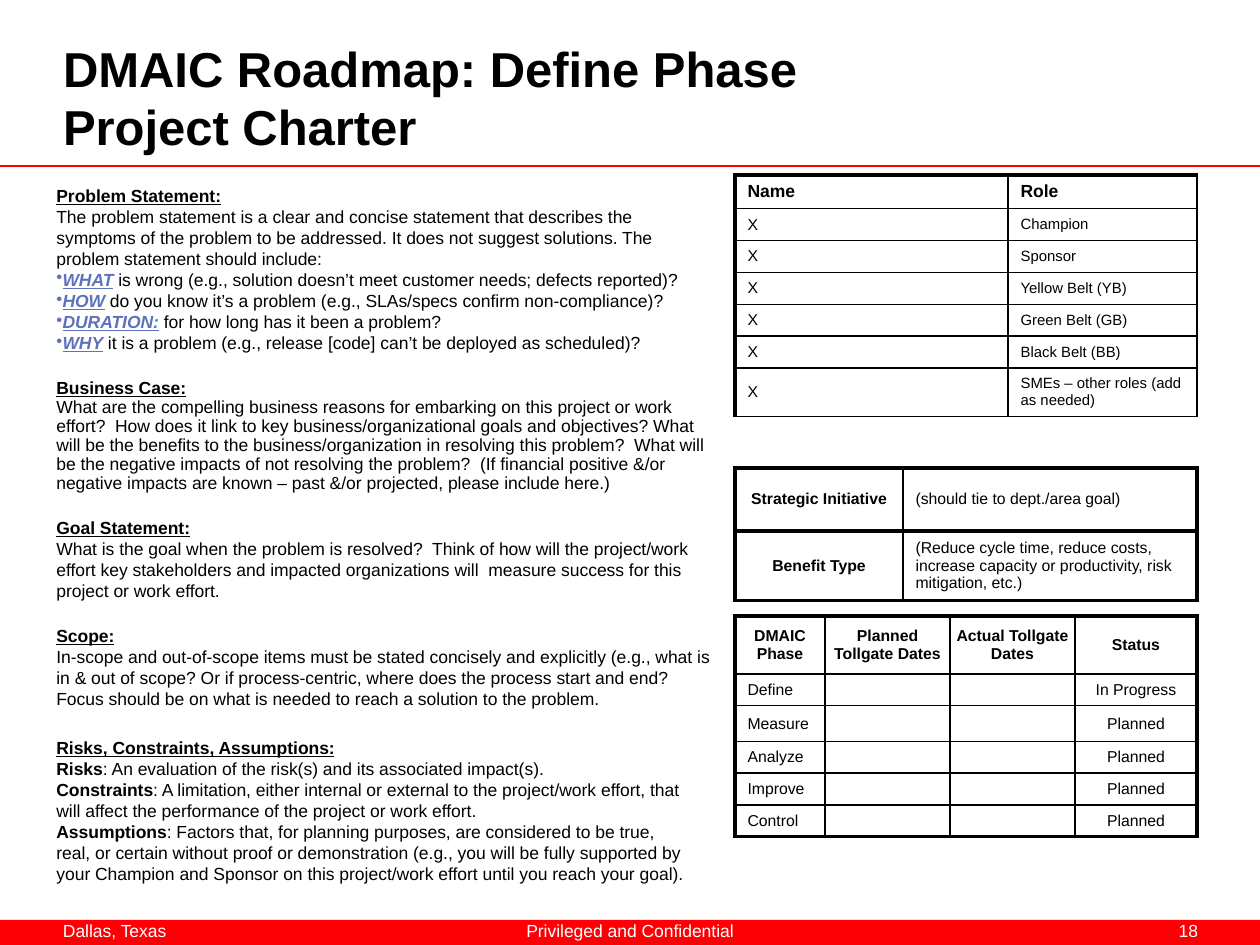
from lxml.etree import SubElement
from pptx import Presentation
from pptx.dml.color import RGBColor
from pptx.enum.shapes import MSO_CONNECTOR, MSO_SHAPE
from pptx.enum.text import MSO_ANCHOR, MSO_AUTO_SIZE, PP_ALIGN
from pptx.oxml.ns import qn
from pptx.util import Emu, Pt

BLACK = RGBColor(0, 0, 0)
WHITE = RGBColor(255, 255, 255)
RED = RGBColor(0xFC, 0x00, 0x06)
BLUE = RGBColor(0x5D, 0x72, 0xBD)
LEFT, MID, RIGHT = PP_ALIGN.LEFT, PP_ALIGN.CENTER, PP_ALIGN.RIGHT


def px(n):
    return Emu(round(n * 914400 / 126))


class Deck:
    font = "Arial"
    thin, thick = 1, 2.25

    def __init__(self, wide, high):
        self.prs = Presentation()
        self.prs.slide_width, self.prs.slide_height = px(wide), px(high)
        self.slide = self.prs.slides.add_slide(self.prs.slide_layouts[5])
        self.shapes = self.slide.shapes

    def run(self, para, text, size, color=BLACK, bold=False, italic=False, under=False):
        run = para.add_run()
        run.text = text
        font = run.font
        font.name, font.size, font.color.rgb = self.font, Pt(size), color
        font.bold, font.italic, font.underline = bold, italic, under

    def flush(self, frame):
        frame.margin_left = frame.margin_top = 0
        frame.margin_right = frame.margin_bottom = 0
        frame.word_wrap = True

    def title(self, lines, box):
        shape = self.shapes.title
        shape.left, shape.top, shape.width, shape.height = map(px, box)
        frame = shape.text_frame
        self.flush(frame)
        frame.auto_size = MSO_AUTO_SIZE.NONE
        frame.vertical_anchor = MSO_ANCHOR.TOP
        para = frame.paragraphs[0]
        para.alignment = LEFT
        for i, line in enumerate(lines):
            if i:
                para.add_line_break()
            self.run(para, line, 28, bold=True)

    def bar(self, box):
        shape = self.shapes.add_shape(MSO_SHAPE.RECTANGLE, *map(px, box))
        shape.shadow.inherit = False
        shape.fill.solid()
        shape.fill.fore_color.rgb = RED
        shape.line.fill.background()

    def rule(self, x1, y1, x2, y2):
        line = self.shapes.add_connector(MSO_CONNECTOR.STRAIGHT, *map(px, (x1, y1, x2, y2)))
        line.line.color.rgb, line.line.width = RED, Pt(self.thin)
        SubElement(line._element.spPr, qn("a:effectLst"))

    def label(self, text, box, align):
        frame = self.shapes.add_textbox(*map(px, box)).text_frame
        self.flush(frame)
        para = frame.paragraphs[0]
        para.alignment = align
        self.run(para, text, 10, WHITE)

    def block(self, head, paras, box, space=None):
        """Underlined heading, then (lead, text, bullet) paragraphs."""
        frame = self.shapes.add_textbox(*map(px, box)).text_frame
        frame.word_wrap = True
        frame.auto_size = MSO_AUTO_SIZE.SHAPE_TO_FIT_TEXT
        self.run(frame.paragraphs[0], head, 10, bold=True, under=True)
        for lead, text, bullet in paras:
            para = frame.add_paragraph()
            if space:
                para.line_spacing = space
            if bullet:
                SubElement(para._p.get_or_add_pPr(), qn("a:buChar"), char="•")
                self.run(para, lead, 10, BLUE, True, True, True)
            elif lead:
                self.run(para, lead, 10, bold=True)
            self.run(para, text, 10)

    def edge(self, cell, side, width):
        line = SubElement(cell._tc.get_or_add_tcPr(), qn("a:ln" + side), w=str(Pt(width)))
        fill = SubElement(line, qn("a:solidFill"))
        SubElement(fill, qn("a:srgbClr"), val=str(BLACK))

    def table(self, x, y, cols, rows, data, size, bold, align, heavy="LRTB", inner=thin, pad=None):
        """size, bold and align are rules of (row, column)."""
        shape = self.shapes.add_table(len(rows), len(cols), px(x), px(y), px(sum(cols)), px(sum(rows)))
        table = shape.table
        table.first_row = table.horz_banding = False
        for col, wide in zip(table.columns, cols):
            col.width = px(wide)
        for row, high in zip(table.rows, rows):
            row.height = px(high)
        for r, texts in enumerate(data):
            for c, text in enumerate(texts):
                cell = table.cell(r, c)
                cell.vertical_anchor = MSO_ANCHOR.MIDDLE
                if pad and r == 0:
                    cell.margin_left = cell.margin_right = px(pad)
                # Outer sides may be heavy, row rules follow inner
                outer = {"L": c == 0, "R": c == len(cols) - 1, "T": r == 0, "B": r == len(rows) - 1}
                for side, out in outer.items():
                    if out:
                        width = self.thick if side in heavy else self.thin
                    else:
                        width = inner if side in "TB" else self.thin
                    self.edge(cell, side, width)
                cell.fill.background()
                para = cell.text_frame.paragraphs[0]
                para.alignment = align(r, c)
                if text:
                    self.run(para, text, size(r, c), bold=bold(r, c))
                else:
                    para._p.get_or_add_endParaRPr().set("sz", str(size(r, c) * 100))


deck = Deck(1260, 945)

# Title and footer
deck.bar((0, 920, 1260, 25))
deck.rule(0, 166, 1260, 166)
deck.title(["DMAIC Roadmap: Define Phase", "Project Charter"], (63, 38, 1134, 130))
deck.label("Dallas, Texas", (63, 920, 150, 25), LEFT)
deck.label("Privileged and Confidential", (480, 920, 300, 25), MID)
deck.label("18", (1091, 920, 107, 25), RIGHT)

# Charter text
deck.block("Problem Statement:", [
    ("", "The problem statement is a clear and concise statement that describes the symptoms of the problem "
         "to be addressed. It does not suggest solutions. The problem statement should include:", False),
    ("WHAT", " is wrong (e.g., solution doesn’t meet customer needs; defects reported)?", True),
    ("HOW", " do you know it’s a problem (e.g., SLAs/specs confirm non-compliance)?", True),
    ("DURATION:", " for how long has it been a problem?", True),
    ("WHY", " it is a problem (e.g., release [code] can’t be deployed as scheduled)?", True),
], (44, 179, 680, 183))
deck.block("Business Case:", [
    ("", "What are the compelling business reasons for embarking on this project or work effort?  How does it "
         "link to key business/organizational goals and objectives? What will be the benefits to the "
         "business/organization in resolving this problem?  What will be the negative impacts of not resolving "
         "the problem?  (If financial positive &/or negative impacts are known – past &/or projected, please "
         "include here.)", False),
], (44, 371, 680, 130), space=0.9)
deck.block("Goal Statement:", [
    ("", "What is the goal when the problem is resolved?  Think of how will the project/work effort key "
         "stakeholders and impacted organizations will  measure success for this project or work effort.", False),
], (44, 511, 680, 97))
deck.block("Scope:", [
    ("", "In-scope and out-of-scope items must be stated concisely and explicitly (e.g., what is in & out of "
         "scope? Or if process-centric, where does the process start and end?  Focus should be on what is needed "
         "to reach a solution to the problem.", False),
], (44, 619, 680, 97))
deck.block("Risks, Constraints, Assumptions:", [
    ("Risks", ": An evaluation of the risk(s) and its associated impact(s).", False),
    ("Constraints", ": A limitation, either internal or external to the project/work effort, that will affect "
                    "the performance of the project or work effort.", False),
    ("Assumptions", ": Factors that, for planning purposes, are considered to be true, real, or certain without "
                    "proof or demonstration (e.g., you will be fully supported by your Champion and Sponsor on "
                    "this project/work effort until you reach your goal).", False),
], (44, 731, 659, 161))

# Team roles
roles = ["Champion", "Sponsor", "Yellow Belt (YB)", "Green Belt (GB)", "Black Belt (BB)",
         "SMEs – other roles (add as needed)"]
deck.table(735, 175, [273, 189], [33, 32, 31, 32, 31, 32, 48],
           [("Name", "Role")] + [("X", role) for role in roles],
           size=lambda r, c: 10 if r == 0 else (9, 8.5)[c],
           bold=lambda r, c: r == 0, align=lambda r, c: LEFT, heavy="LT")

# Strategic fit
deck.table(735, 468, [168, 294], [63, 67], [
    ("Strategic Initiative", "(should tie to dept./area goal)"),
    ("Benefit Type", "(Reduce cycle time, reduce costs, increase capacity or productivity, risk mitigation, etc.)"),
], size=lambda r, c: 9, bold=lambda r, c: c == 0,
    align=lambda r, c: LEFT if c else MID, inner=Deck.thick)

# Tollgate dates
phases = ["Define", "Measure", "Analyze", "Improve", "Control"]
deck.table(735, 616, [90, 125, 125, 122], [58, 31, 36, 31, 32, 31],
           [("DMAIC Phase", "Planned Tollgate Dates", "Actual Tollgate Dates", "Status")]
           + [(phase, "", "", "Planned" if i else "In Progress") for i, phase in enumerate(phases)],
           size=lambda r, c: 9, bold=lambda r, c: r == 0,
           align=lambda r, c: MID if r == 0 or c == 3 else LEFT, pad=6)

deck.prs.save("out.pptx")
